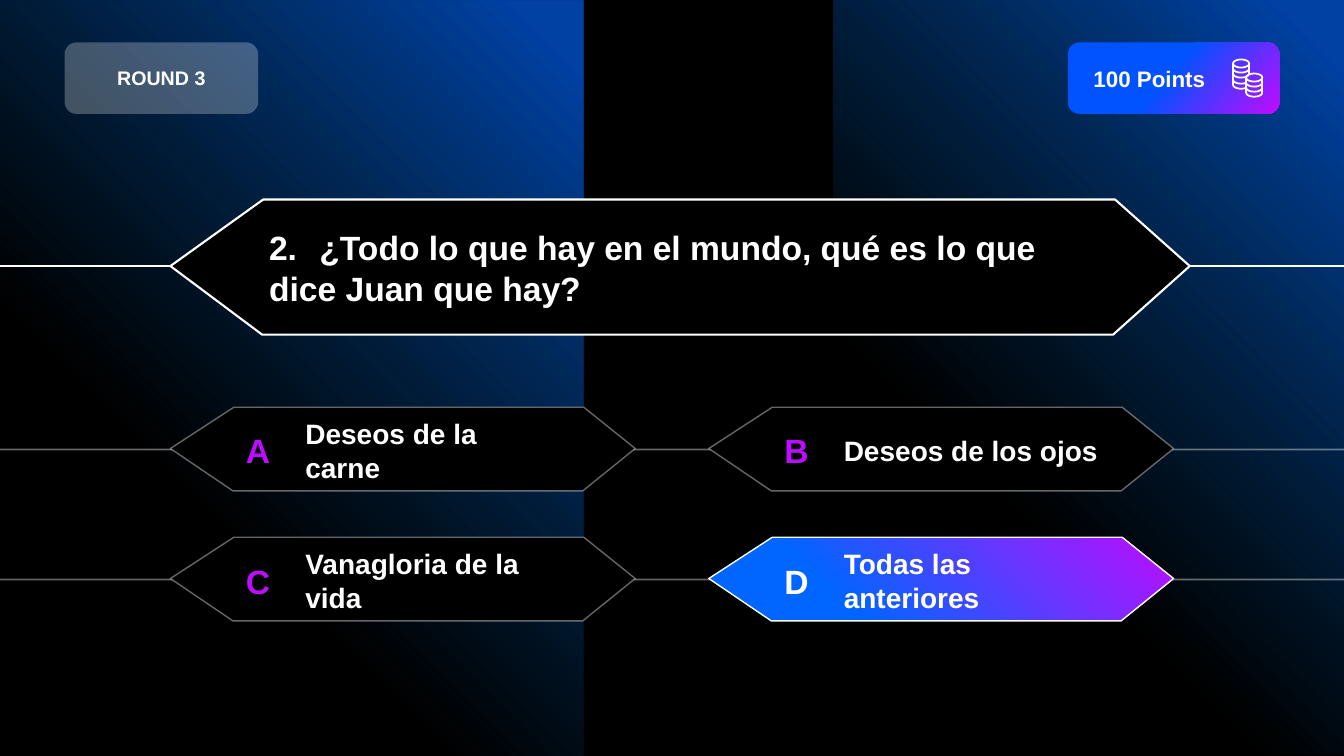
from math import cos, pi, sin
from lxml.etree import SubElement
from pptx import Presentation
from pptx.dml.color import RGBColor
from pptx.enum.shapes import MSO_CONNECTOR, MSO_SHAPE
from pptx.enum.text import MSO_ANCHOR, PP_ALIGN
from pptx.oxml import parse_xml
from pptx.oxml.ns import nsdecls, qn
from pptx.util import Inches, Pt

COLORS = {"black": "000000", "white": "FFFFFF", "purple": "BD0DFF",
          "blue": "0066FF", "teal": "0070C0", "royal": "0053FF"}
RGB = {name: RGBColor.from_string(value) for name, value in COLORS.items()}
CORNER = '<a:path path="circle"><a:fillToRect l="100000" b="100000"/></a:path>'
DIAGONAL = '<a:lin ang="2400000" scaled="0"/>'
GLOW = [(0, "blue", 63), (6, "blue", 63), (66, "teal", 0), (100, "black", 0)]
WINNER = [(0, "purple", 100), (73, "blue", 100), (100, "blue", 100)]
BADGE = [(0, "royal", 100), (47, "royal", 100), (99, "purple", 100), (100, "purple", 100)]


def set_gradient(s, stops, direction):
    s.fill.gradient()
    old = s._element.spPr.find(qn("a:gradFill"))
    gs = "".join(f'<a:gs pos="{pos * 1000}"><a:srgbClr val="{COLORS[color]}">'
                 f'<a:alpha val="{alpha * 1000}"/></a:srgbClr></a:gs>'
                 for pos, color, alpha in stops)
    new = parse_xml(f'<a:gradFill {nsdecls("a")} rotWithShape="1">'
                    f'<a:gsLst>{gs}</a:gsLst>{direction}</a:gradFill>')
    old.getparent().replace(old, new)


def write(s, text, size, color="white", align=PP_ALIGN.LEFT):
    tf = s.text_frame
    tf.word_wrap = True
    tf.vertical_anchor = MSO_ANCHOR.MIDDLE
    p = tf.paragraphs[0]
    p.alignment = align
    r = p.add_run()
    r.text = text
    r.font.name = "Arial"
    r.font.size = Pt(size)
    r.font.bold = True
    r.font.color.rgb = RGB[color]


prs = Presentation()
prs.slide_width, prs.slide_height = Inches(13.33), Inches(7.5)
slide = prs.slides.add_slide(prs.slide_layouts[6])
shapes = slide.shapes
slide.background.fill.solid()
slide.background.fill.fore_color.rgb = RGB["black"]
faded = []

for x, y, w, flipped in [(0, 0.01, 5.79, True), (8.27, 0, 5.06, False)]:
    s = shapes.add_shape(MSO_SHAPE.RECTANGLE, Inches(x), Inches(y), Inches(w), Inches(7.49))
    s.shadow.inherit = False
    s.line.fill.background()
    set_gradient(s, GLOW, CORNER)
    if flipped:
        s._element.spPr.find(qn("a:xfrm")).set("flipH", "1")

for y, width, dim in [(2.64, 1.5, False), (4.46, 1.25, True), (5.75, 1.25, True)]:
    s = shapes.add_connector(MSO_CONNECTOR.STRAIGHT, 0, Inches(y), Inches(13.33), Inches(y))
    s.line.color.rgb = RGB["white"]
    s.line.width = Pt(width)
    SubElement(s._element.spPr, qn("a:effectLst"))
    if dim:
        faded.append((s, "ln", 40))

QUESTION = [(0, 0.66), (0.92, 0), (9.37, 0), (10.11, 0.66), (9.35, 1.34), (0.91, 1.34)]
ANSWER = [(0, 0.41), (0.63, 0), (4.1, 0), (4.61, 0.41), (4.09, 0.83), (0.62, 0.83)]
frames = [(1.69, 1.98, QUESTION, 1.5, None, None, 0)]
answers = [("A", "Deseos de la carne", 2.32), ("B", "Deseos de los ojos", 2.85),
           ("C", "Vanagloria de la vida", 2.85), ("D", "Todas las anteriores", 2.32)]
for i, (letter, text, w) in enumerate(answers):
    frames.append((1.69 + i % 2 * 5.34, 4.04 + i // 2 * 1.29, ANSWER, 1, letter, text, w))

for x, y, outline, width, letter, text, w in frames:
    pts = [(Inches(x + dx), Inches(y + dy)) for dx, dy in outline]
    fb = shapes.build_freeform(*pts[0])
    fb.add_line_segments(pts[1:], close=True)
    s = fb.convert_to_shape()
    s.shadow.inherit = False
    s.line.color.rgb = RGB["white"]
    s.line.width = Pt(width)
    if letter == "D":
        set_gradient(s, WINNER, CORNER)
    else:
        s.fill.solid()
        s.fill.fore_color.rgb = RGB["black"]
    if letter in ("A", "B", "C"):
        faded.append((s, "ln", 40))
    if letter:
        s = shapes.add_textbox(Inches(x + 0.61), Inches(y + 0.03), Inches(0.52), Inches(0.8))
        write(s, letter, 24, "white" if letter == "D" else "purple", PP_ALIGN.CENTER)
        s = shapes.add_textbox(Inches(x + 1.24), Inches(y + 0.03), Inches(w), Inches(0.8))
        write(s, text, 20)

s = shapes.add_textbox(Inches(2.57), Inches(1.99), Inches(8.42), Inches(1.33))
write(s, "2.\t¿Todo lo que hay en el mundo, qué es lo que dice Juan que hay?", 24)

for x, w, text, size, align in [(10.59, 2.1, "100 Points", 16, PP_ALIGN.LEFT),
                                (0.64, 1.92, "ROUND 3", 14, PP_ALIGN.CENTER)]:
    s = shapes.add_shape(MSO_SHAPE.ROUNDED_RECTANGLE, Inches(x), Inches(0.42), Inches(w), Inches(0.71))
    s.adjustments[0] = 0.167
    s.shadow.inherit = False
    s.line.fill.background()
    write(s, text, size, align=align)
    if align == PP_ALIGN.LEFT:
        s.text_frame.margin_left = Inches(0.22)
        set_gradient(s, BADGE, DIAGONAL)
    else:
        s.fill.solid()
        s.fill.fore_color.rgb = RGB["white"]
        faded.append((s, "solidFill", 26))

for cx, top, rims, right_end in [(12.31, 0.63, [(0.68, 0), (0.73, 0), (0.79, 60), (0.84, 60)], 0.73),
                                 (12.44, 0.77, [(0.82, 0), (0.87, 0), (0.92, 0)], 0.92)]:
    arcs = [(top, 0, 360)] + [(y, start, 180) for y, start in rims]
    strokes = [[(cx + 0.08 * cos(a * pi / 180), y + 0.04 * sin(a * pi / 180))
                for a in range(start, end + 1, 15)] for y, start, end in arcs]
    strokes += [[(cx - 0.08, top), (cx - 0.08, rims[-1][0])], [(cx + 0.08, top), (cx + 0.08, right_end)]]
    strokes = [[(Inches(x), Inches(y)) for x, y in stroke] for stroke in strokes]
    fb = shapes.build_freeform(*strokes[0][0])
    for stroke in strokes:
        fb.move_to(*stroke[0])
        fb.add_line_segments(stroke[1:], close=False)
    s = fb.convert_to_shape()
    s.shadow.inherit = False
    s.fill.background()
    s.line.color.rgb = RGB["white"]
    s.line.width = Pt(1.25)

for s, part, alpha in faded:
    color = next(s._element.spPr.find(qn(f"a:{part}")).iter(qn("a:srgbClr")))
    SubElement(color, qn("a:alpha")).set("val", str(alpha * 1000))

prs.save("out.pptx")
